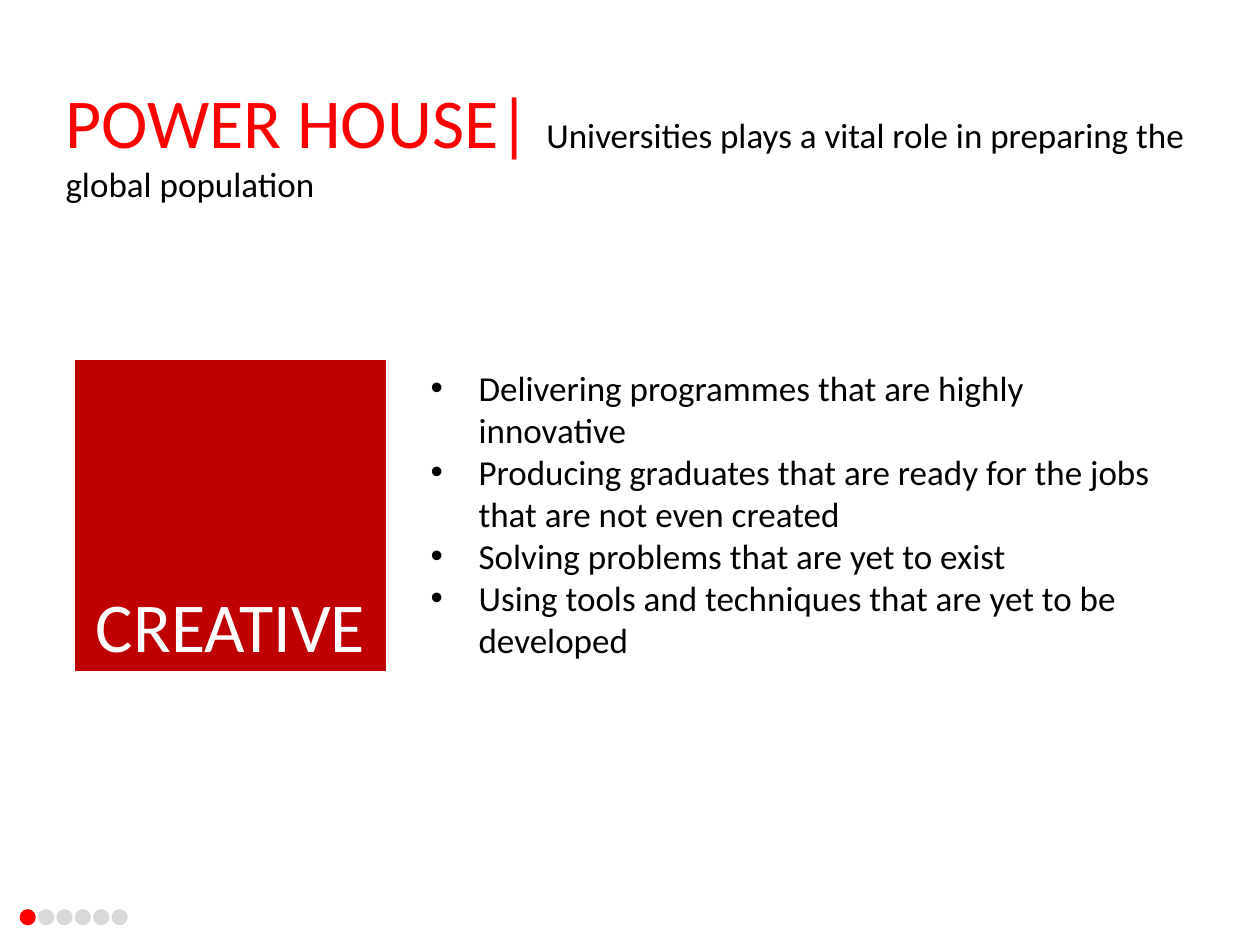
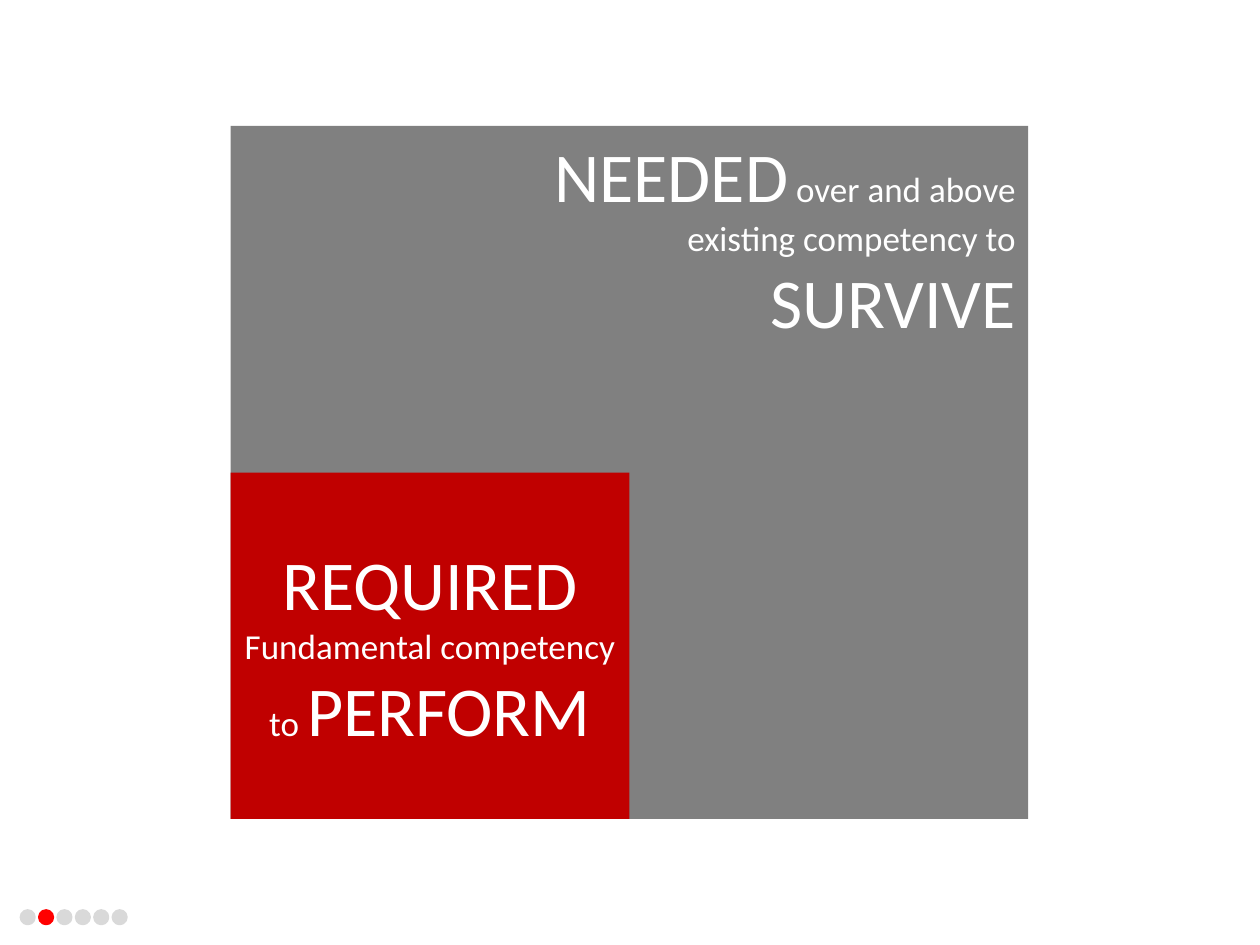
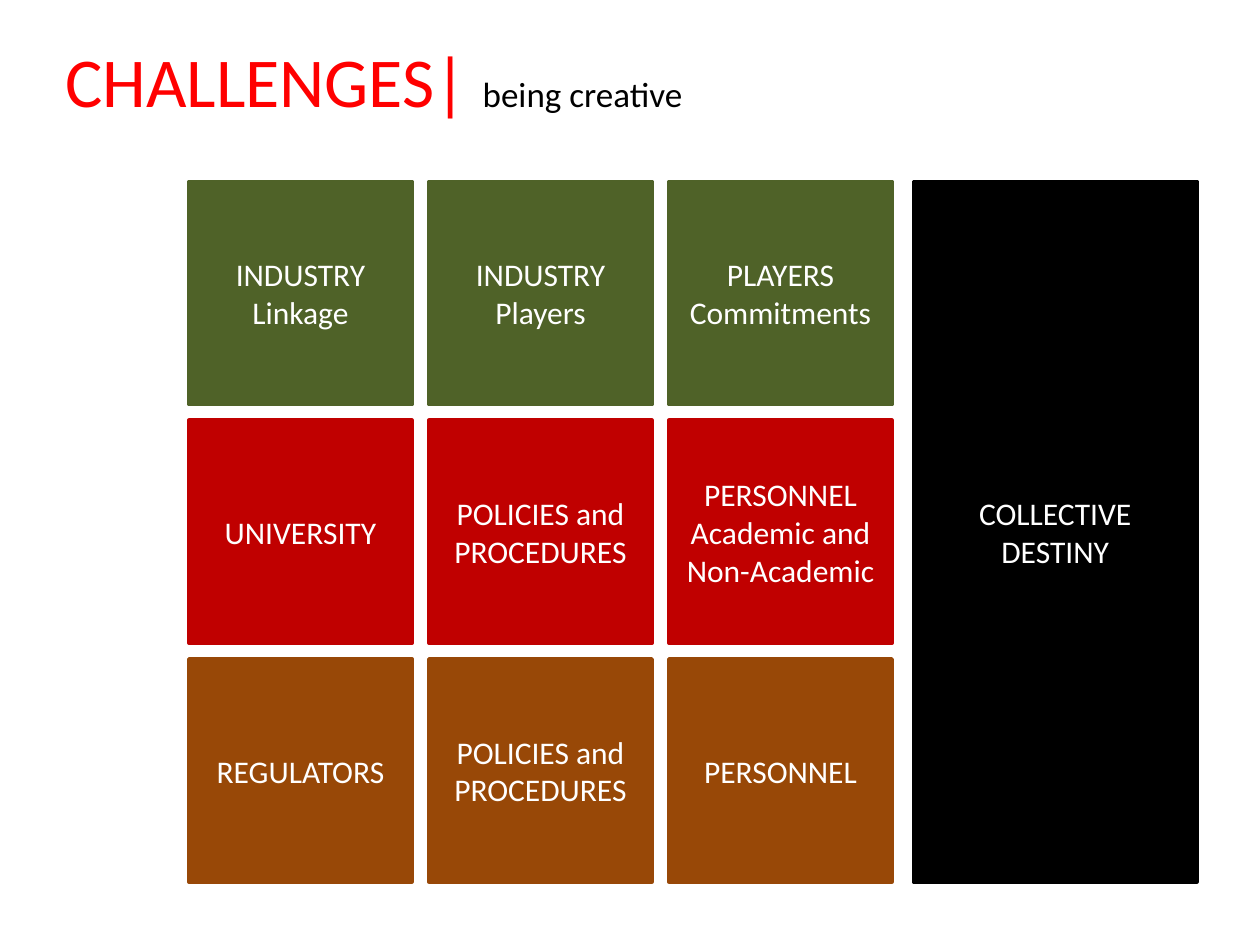
from lxml import etree
from pptx import Presentation
from pptx.dml.color import RGBColor
from pptx.enum.shapes import MSO_SHAPE
from pptx.enum.text import MSO_ANCHOR, MSO_AUTO_SIZE, PP_ALIGN
from pptx.oxml.ns import qn
from pptx.util import Inches, Pt

RECTANGLE, OVAL = MSO_SHAPE.RECTANGLE, MSO_SHAPE.OVAL
TOP, MIDDLE, BOTTOM = MSO_ANCHOR.TOP, MSO_ANCHOR.MIDDLE, MSO_ANCHOR.BOTTOM
LEFT, CENTER, RIGHT = PP_ALIGN.LEFT, PP_ALIGN.CENTER, PP_ALIGN.RIGHT

FONT = "Calibri"
LARGE, MEDIUM, SMALL = 40, 20, 18
WHITE = RGBColor(0xFF, 0xFF, 0xFF)
BLACK = RGBColor(0x00, 0x00, 0x00)
BRIGHT_RED = RGBColor(0xFF, 0x00, 0x00)
DEEP_RED = RGBColor(0xC0, 0x00, 0x00)
GRAY = RGBColor(0x80, 0x80, 0x80)
PALE_GRAY = RGBColor(0xD9, 0xD9, 0xD9)
GREEN = RGBColor(0x4F, 0x62, 0x28)
BROWN = RGBColor(0x98, 0x48, 0x07)

TITLE_ONLY, BLANK = 5, 6

POWER_HOUSE = ("POWER HOUSE", "Universities plays a vital role in preparing "
               "the global population")
CREATIVE_POINTS = [
    "Delivering programmes that are highly innovative",
    "Producing graduates that are ready for the jobs that are not even created",
    "Solving problems that are yet to exist",
    "Using tools and techniques that are yet to be developed",
]

NEEDED = [("NEEDED", LARGE), (" over and above existing competency to ", MEDIUM),
          ("SURVIVE", LARGE)]
REQUIRED = [("REQUIRED ", LARGE), ("Fundamental competency to ", MEDIUM),
            ("PERFORM", LARGE)]

CHALLENGES = ("CHALLENGES", "being creative")
CHALLENGE_ROWS = [
    (GREEN, ["INDUSTRY Linkage", "INDUSTRY Players", "PLAYERS Commitments"]),
    (DEEP_RED, ["UNIVERSITY", "POLICIES and PROCEDURES",
                "PERSONNEL Academic and Non-Academic"]),
    (BROWN, ["REGULATORS", "POLICIES and PROCEDURES", "PERSONNEL"]),
]
GRID_LEFT, GRID_TOP, GRID_WIDTH, GRID_HEIGHT = 1.5, 1.44, 5.58, 5.56
TILE = 1.77

DOT_COUNT, DOT_LEFT, DOT_TOP, DOT_SIZE, DOTS_WIDTH = 6, 0.17, 7.23, 0.1, 0.83
INDENT = 0.38


def inches(box):
    return [Inches(value) for value in box]


def spaced(start, length, size, count):
    """Starts of equal parts that fill a length with equal gaps."""
    step = (length - size) / (count - 1)
    return [start + step * index for index in range(count)]


def write(para, spans):
    """Fill a paragraph with (text, size, colour) spans."""
    for text, size, color in spans:
        span = para.add_run()
        span.text = text
        span.font.color.rgb = color
        for name, value in {"name": FONT, "size": Pt(size)}.items():
            setattr(span.font, name, value)


def set_margins(para, left, first=0):
    properties = para._p.get_or_add_pPr()
    properties.set("marL", str(Inches(left)))
    properties.set("indent", str(Inches(first)))
    return properties


def add_title(page, title, box):
    heading, remark = title
    holder = page.shapes.title
    holder.left, holder.top, holder.width, holder.height = inches(box)
    frame = holder.text_frame
    for name, value in {"word_wrap": True, "vertical_anchor": TOP,
                        "auto_size": MSO_AUTO_SIZE.NONE}.items():
        setattr(frame, name, value)
    para = frame.paragraphs[0]
    para.alignment = LEFT
    write(para, [(heading + "| ", LARGE, BRIGHT_RED), (remark, MEDIUM, BLACK)])


def add_figure(parent, kind, box, fill, line=None):
    figure = parent.shapes.add_shape(kind, *inches(box))
    figure.shadow.inherit = False
    figure.fill.solid()
    figure.fill.fore_color.rgb = fill
    if line is None:
        figure.line.fill.background()
    else:
        figure.line.color.rgb = line
        figure.line.width = Pt(2)
    return figure


def add_block(parent, box, spans, fill, line=None, anchor=MIDDLE, align=CENTER):
    """Add a filled rectangle with white text and return its paragraph."""
    block = add_figure(parent, RECTANGLE, box, fill, line)
    frame = block.text_frame
    frame.word_wrap = True
    frame.vertical_anchor = anchor
    para = frame.paragraphs[0]
    para.alignment = align
    write(para, [(text, size, WHITE) for text, size in spans])
    return para


def add_bullets(page, box, points):
    frame = page.shapes.add_textbox(*inches(box)).text_frame
    frame.word_wrap = True
    for index, point in enumerate(points):
        para = frame.add_paragraph() if index else frame.paragraphs[0]
        properties = set_margins(para, INDENT, -INDENT)
        etree.SubElement(properties, qn("a:buFont"), typeface="Arial")
        etree.SubElement(properties, qn("a:buChar"), char="•")
        write(para, [(point, MEDIUM, BLACK)])


def add_progress_dots(page, current):
    group = page.shapes.add_group_shape()
    for index, left in enumerate(spaced(DOT_LEFT, DOTS_WIDTH, DOT_SIZE, DOT_COUNT)):
        color = BRIGHT_RED if index == current else PALE_GRAY
        add_figure(group, OVAL, (left, DOT_TOP, DOT_SIZE, DOT_SIZE), color, color)


def add_page(deck, layout):
    return deck.slides.add_slide(deck.slide_layouts[layout])


def build_power_house(deck):
    page = add_page(deck, TITLE_ONLY)
    add_title(page, POWER_HOUSE, (0.42, 0.57, 9.33, 1.11))
    add_block(page, (0.58, 2.84, 2.5, 2.5), [("CREATIVE", LARGE)],
              DEEP_RED, WHITE, anchor=BOTTOM)
    add_bullets(page, (3.32, 2.86, 6.08, 2.46), CREATIVE_POINTS)
    add_progress_dots(page, 0)


def build_competency(deck):
    page = add_page(deck, BLANK)
    left, top, width, height = 1.83, 1, 6.33, 5.5
    para = add_block(page, (left, top, width, height), NEEDED, GRAY,
                     anchor=TOP, align=RIGHT)
    set_margins(para, 1.6)
    add_block(page, (left, top + height / 2, width / 2, height / 2),
              REQUIRED, DEEP_RED)
    add_progress_dots(page, 1)


def build_challenges(deck):
    page = add_page(deck, TITLE_ONLY)
    add_title(page, CHALLENGES, (0.42, 0.25, 5.2, 0.77))
    group = page.shapes.add_group_shape()
    tops = spaced(GRID_TOP, GRID_HEIGHT, TILE, len(CHALLENGE_ROWS))
    for top, (color, labels) in zip(tops, CHALLENGE_ROWS):
        lefts = spaced(GRID_LEFT, GRID_WIDTH, TILE, len(labels))
        for left, label in zip(lefts, labels):
            add_block(group, (left, top, TILE, TILE), [(label, SMALL)], color, color)
    add_block(page, (7.25, GRID_TOP, 2.25, GRID_HEIGHT),
              [("COLLECTIVE DESTINY", SMALL)], BLACK, BLACK)


def main():
    deck = Presentation()
    deck.slide_width, deck.slide_height = Inches(10), Inches(7.5)
    build_power_house(deck)
    build_competency(deck)
    build_challenges(deck)
    deck.save("out.pptx")


if __name__ == "__main__":
    main()
